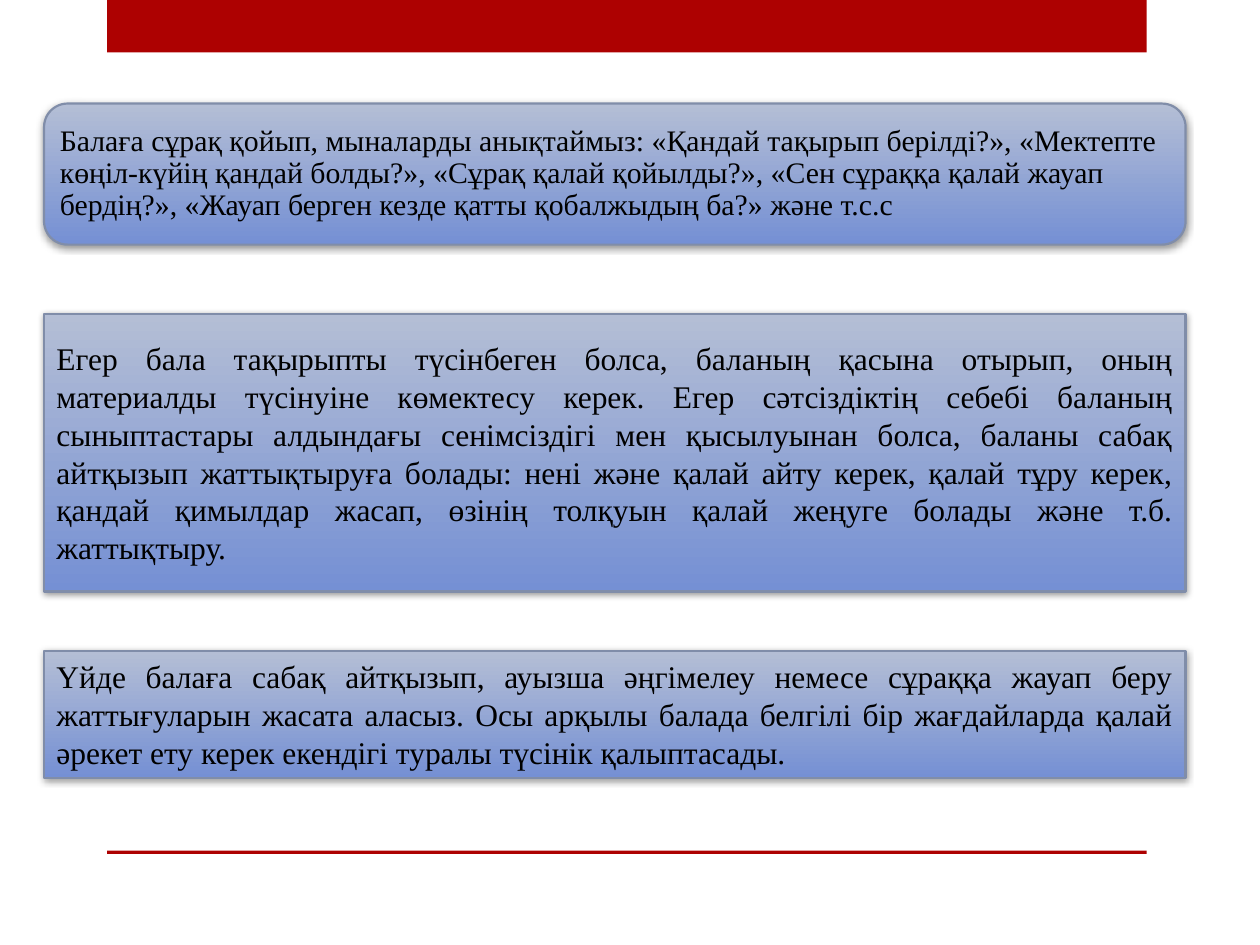
from dataclasses import dataclass

from lxml.etree import SubElement
from pptx import Presentation
from pptx.dml.color import RGBColor
from pptx.enum.shapes import MSO_SHAPE as Shape
from pptx.enum.text import MSO_ANCHOR as Anchor, MSO_AUTO_SIZE as AutoSize, PP_ALIGN as Align
from pptx.oxml.ns import qn
from pptx.util import Pt


@dataclass(frozen=True)
class Theme:
    bar: RGBColor = RGBColor(0xAD, 0x01, 0x01)
    panel_top: RGBColor = RGBColor(0xB4, 0xBE, 0xD5)
    panel_bottom: RGBColor = RGBColor(0x75, 0x90, 0xD4)
    panel_edge: RGBColor = RGBColor(0x80, 0x8D, 0xA9)
    text: RGBColor = RGBColor(0, 0, 0)
    shadow: str = "000000"
    font: str = "Times New Roman"
    question_size: int = 17
    advice_size: int = 18


THEME = Theme()
BAR_LEFT, BAR_WIDTH = 61.2, 594
PANEL_LEFT, PANEL_WIDTH = 25.2, 652.3

QUESTIONS = (
    "Балаға сұрақ қойып, мыналарды анықтаймыз: «Қандай тақырып берілді?», "
    "«Мектепте көңіл-күйің қандай болды?», «Сұрақ қалай қойылды?», "
    "«Сен сұраққа қалай жауап бердің?», "
    "«Жауап берген кезде қатты қобалжыдың ба?» және т.с.с"
)
CLASS_ADVICE = (
    "Егер бала тақырыпты түсінбеген болса, баланың қасына отырып, "
    "оның материалды түсінуіне көмектесу керек. Егер сәтсіздіктің себебі "
    "баланың сыныптастары алдындағы сенімсіздігі мен қысылуынан болса, "
    "баланы сабақ айтқызып жаттықтыруға болады: нені және қалай айту керек, "
    "қалай тұру керек, қандай қимылдар жасап, өзінің толқуын қалай жеңуге "
    "болады және т.б. жаттықтыру. "
)
HOME_ADVICE = (
    "Үйде балаға сабақ айтқызып, ауызша әңгімелеу немесе сұраққа жауап беру "
    "жаттығуларын жасата аласыз. Осы арқылы балада белгілі бір жағдайларда "
    "қалай әрекет ету керек екендігі туралы түсінік қалыптасады."
)


def add_bar(slide, top, height):
    bar = slide.shapes.add_shape(
        Shape.RECTANGLE, Pt(BAR_LEFT), Pt(top), Pt(BAR_WIDTH), Pt(height))
    bar.shadow.inherit = False
    bar.fill.solid()
    bar.fill.fore_color.rgb = THEME.bar
    bar.line.fill.background()


def add_soft_shadow(panel):
    panel.shadow.inherit = False
    effects = panel._element.spPr.find(qn("a:effectLst"))
    shadow = SubElement(effects, qn("a:outerShdw"), blurRad=str(Pt(4)),
                        dist=str(Pt(1)), dir=str(88 * 60000), rotWithShape="0")
    color = SubElement(shadow, qn("a:srgbClr"), val=THEME.shadow)
    SubElement(color, qn("a:alpha"), val="40000")


def add_panel(slide, outline, top, height):
    panel = slide.shapes.add_shape(
        outline, Pt(PANEL_LEFT), Pt(top), Pt(PANEL_WIDTH), Pt(height))
    panel.fill.gradient()
    panel.fill.gradient_angle = 270
    colors = (THEME.panel_top, THEME.panel_bottom)
    for stop, color, position in zip(panel.fill.gradient_stops, colors, (0, 1)):
        stop.color.rgb = color
        stop.position = position
    panel.line.color.rgb = THEME.panel_edge
    panel.line.width = Pt(1.25)
    add_soft_shadow(panel)
    return panel


def write(panel, words, size, align=Align.JUSTIFY, anchor=Anchor.MIDDLE):
    frame = panel.text_frame
    frame.word_wrap = True
    frame.vertical_anchor = anchor
    paragraph = frame.paragraphs[0]
    paragraph.alignment = align
    run = paragraph.add_run()
    run.text = words
    run.font.name = THEME.font
    run.font.size = Pt(size)
    run.font.color.rgb = THEME.text
    return frame


def main():
    deck = Presentation()
    deck.slide_width, deck.slide_height = Pt(720), Pt(540)
    slide = deck.slides.add_slide(deck.slide_layouts[6])

    add_bar(slide, top=0, height=30)
    add_bar(slide, top=486, height=2)

    questions = add_panel(slide, Shape.ROUNDED_RECTANGLE, top=59.2, height=80.6)
    frame = write(questions, QUESTIONS, THEME.question_size, align=Align.LEFT)
    frame.margin_left = frame.margin_right = Pt(5.1)
    frame.margin_top = frame.margin_bottom = Pt(5.1)
    frame.paragraphs[0].line_spacing = 0.9

    class_advice = add_panel(slide, Shape.RECTANGLE, top=179.3, height=158.7)
    frame = write(class_advice, CLASS_ADVICE, THEME.advice_size)
    frame.paragraphs[0].space_before = Pt(3.6)

    home_advice = add_panel(slide, Shape.RECTANGLE, top=372, height=72.7)
    frame = write(home_advice, HOME_ADVICE, THEME.advice_size, anchor=Anchor.TOP)
    frame.auto_size = AutoSize.SHAPE_TO_FIT_TEXT

    deck.save("out.pptx")


if __name__ == "__main__":
    main()
